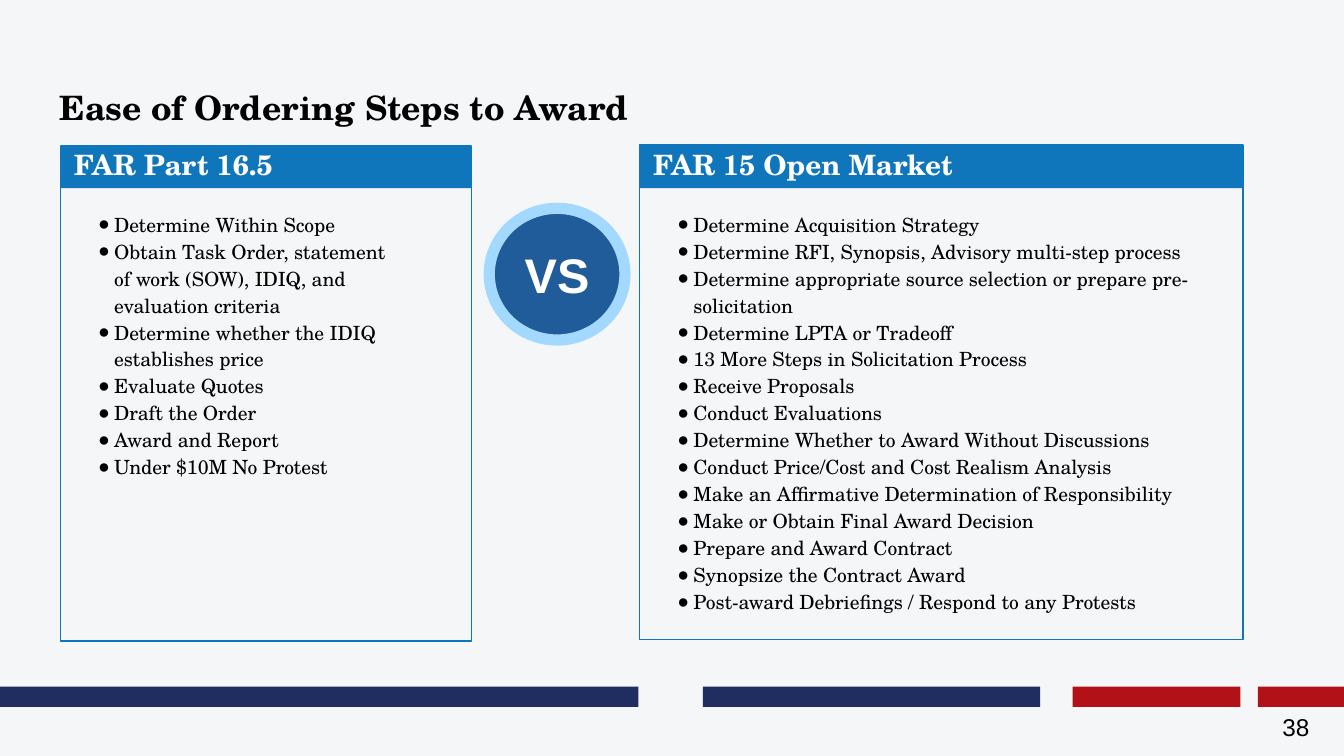
from dataclasses import dataclass

from lxml import etree
from pptx import Presentation
from pptx.dml.color import RGBColor
from pptx.enum.shapes import MSO_SHAPE
from pptx.enum.text import MSO_ANCHOR, PP_ALIGN
from pptx.oxml.ns import qn
from pptx.util import Inches, Pt

RECTANGLE, OVAL = MSO_SHAPE.RECTANGLE, MSO_SHAPE.OVAL
TOP, MIDDLE = MSO_ANCHOR.TOP, MSO_ANCHOR.MIDDLE
LEFT, CENTER, RIGHT = PP_ALIGN.LEFT, PP_ALIGN.CENTER, PP_ALIGN.RIGHT

PAPER = RGBColor(0xF5, 0xF6, 0xF7)
NAVY = RGBColor(0x1F, 0x2D, 0x61)
RED = RGBColor(0xB1, 0x11, 0x17)
BLUE = RGBColor(0x10, 0x76, 0xBC)
BADGE_BLUE = RGBColor(0x1F, 0x5C, 0x99)
SKY = RGBColor(0xA3, 0xD9, 0xFF)
BLACK = RGBColor(0, 0, 0)
WHITE = RGBColor(0xFF, 0xFF, 0xFF)

SERIF, SANS = "TeX Gyre Schola", "Arial"
CELL = Inches(0.1)  # the slide is a grid of 100 columns by 56.25 rows
COLUMNS, ROWS = 100, 56.25
PANEL_TOP, PANEL_ROWS, HEADER_ROWS = 10.8, 36.8, 3.2
STRIPE_TOP, STRIPE_ROWS = 51.1, 1.5


@dataclass(frozen=True)
class Area:
    """A rectangle in grid columns and rows."""
    column: float
    row: float
    columns: float
    rows: float

    def lengths(self) -> list[int]:
        return [round(n * CELL) for n in (self.column, self.row, self.columns, self.rows)]


@dataclass(frozen=True)
class Style:
    size: float
    font: str = SERIF
    color: RGBColor = BLACK
    bold: bool = False


@dataclass(frozen=True)
class Panel:
    column: float
    columns: float
    text_columns: float
    frame_shift: float
    heading: str
    steps: tuple[str, ...]


@dataclass(frozen=True)
class Stripe:
    column: float
    columns: float
    color: RGBColor


TITLE_STYLE = Style(18, bold=True)
HEADING_STYLE = Style(15, color=WHITE, bold=True)
STEP_STYLE = Style(10.5)
BADGE_STYLE = Style(26, SANS, WHITE, True)
NUMBER_STYLE = Style(13, SANS)

STRIPES = (
    Stripe(0, 47.5, NAVY),
    Stripe(52.3, 25.1, NAVY),
    Stripe(79.8, 12.5, RED),
    Stripe(93.6, 6.4, RED),
)

PANELS = (
    Panel(4.5, 30.6, 25.8, 0.1, "FAR Part 16.5", (
        "Determine Within Scope",
        "Obtain Task Order, statement \nof work (SOW), IDIQ, and \nevaluation criteria",
        "Determine whether the IDIQ \nestablishes price",
        "Evaluate Quotes",
        "Draft the Order",
        "Award and Report",
        "Under $10M No Protest",
    )),
    Panel(47.6, 44.9, 45.8, 0, "FAR 15 Open Market", (
        "Determine Acquisition Strategy",
        "Determine RFI, Synopsis, Advisory multi-step process",
        "Determine appropriate source selection or prepare pre-solicitation",
        "Determine LPTA or Tradeoff",
        "13 More Steps in Solicitation Process",
        "Receive Proposals",
        "Conduct Evaluations",
        "Determine Whether to Award Without Discussions",
        "Conduct Price/Cost and Cost Realism Analysis",
        "Make an Affirmative Determination of Responsibility",
        "Make or Obtain Final Award Decision",
        "Prepare and Award Contract",
        "Synopsize the Contract Award",
        "Post-award Debriefings / Respond to any Protests",
    )),
)


def add_block(slide, kind, area: Area, fill=None, line=None, line_width: float = 0.75):
    block = slide.shapes.add_shape(kind, *area.lengths())
    block.shadow.inherit = False
    if fill is None:
        block.fill.background()
    else:
        block.fill.solid()
        block.fill.fore_color.rgb = fill
    if line is None:
        block.line.fill.background()
    else:
        block.line.color.rgb = line
        block.line.width = Pt(line_width)
    return block


def prepare_frame(frame, anchor, left_inset: float = 1) -> None:
    frame.word_wrap = True
    frame.vertical_anchor = anchor
    frame.margin_left = round(left_inset * CELL)
    frame.margin_right = frame.margin_top = frame.margin_bottom = CELL


def write(paragraph, text: str, style: Style, align=LEFT) -> None:
    """Add one run per line, with line breaks between them."""
    paragraph.alignment = align
    for index, line in enumerate(text.split("\n")):
        if index:
            paragraph.add_line_break()
        run = paragraph.add_run()
        run.text = line
        run.font.name = style.font
        run.font.size = Pt(style.size)
        run.font.bold = style.bold
        run.font.color.rgb = style.color


def add_text(slide, area: Area, text: str, style: Style,
             align=LEFT, anchor=TOP, left_inset: float = 1):
    frame = slide.shapes.add_textbox(*area.lengths()).text_frame
    prepare_frame(frame, anchor, left_inset)
    write(frame.paragraphs[0], text, style, align)
    return frame


def add_bullet(paragraph) -> None:
    paragraph.line_spacing = 1.15
    properties = paragraph._p.get_or_add_pPr()
    properties.set("marL", str(Inches(0.3)))
    properties.set("indent", str(Inches(-0.12)))
    color = etree.SubElement(properties, qn("a:buClr"))
    etree.SubElement(color, qn("a:srgbClr")).set("val", str(BLACK))
    etree.SubElement(properties, qn("a:buFont")).set("typeface", SANS)
    etree.SubElement(properties, qn("a:buChar")).set("char", "●")


def add_panel(slide, panel: Panel) -> None:
    frame_area = Area(panel.column, PANEL_TOP + panel.frame_shift, panel.columns, PANEL_ROWS)
    add_block(slide, RECTANGLE, frame_area, line=BLUE)
    add_block(slide, RECTANGLE,
              Area(panel.column, PANEL_TOP, panel.columns, HEADER_ROWS), fill=BLUE)
    text_area = Area(panel.column + 1, 10, panel.text_columns, 37.6)
    frame = add_text(slide, text_area, panel.heading, HEADING_STYLE, left_inset=0)
    frame.paragraphs[0].space_after = Pt(14.8)
    for step in panel.steps:
        paragraph = frame.add_paragraph()
        add_bullet(paragraph)
        write(paragraph, step, STEP_STYLE)


def main() -> None:
    deck = Presentation()
    deck.slide_width, deck.slide_height = round(COLUMNS * CELL), round(ROWS * CELL)
    slide = deck.slides.add_slide(deck.slide_layouts[6])
    slide.background.fill.solid()
    slide.background.fill.fore_color.rgb = PAPER

    for stripe in STRIPES:
        area = Area(stripe.column, STRIPE_TOP, stripe.columns, STRIPE_ROWS)
        add_block(slide, RECTANGLE, area, fill=stripe.color)
    add_text(slide, Area(3.45, 4.85, 93.2, 6.3), "Ease of Ordering Steps to Award",
             TITLE_STYLE, anchor=MIDDLE)
    for panel in PANELS:
        add_panel(slide, panel)

    badge = add_block(slide, OVAL, Area(36.4, 15.5, 10.1, 9.8), BADGE_BLUE, SKY, 6)
    prepare_frame(badge.text_frame, MIDDLE)
    write(badge.text_frame.paragraphs[0], "VS", BADGE_STYLE, CENTER)
    add_text(slide, Area(92.4, 52, 6, 4.25), "38", NUMBER_STYLE, RIGHT)
    deck.save("out.pptx")


if __name__ == "__main__":
    main()
